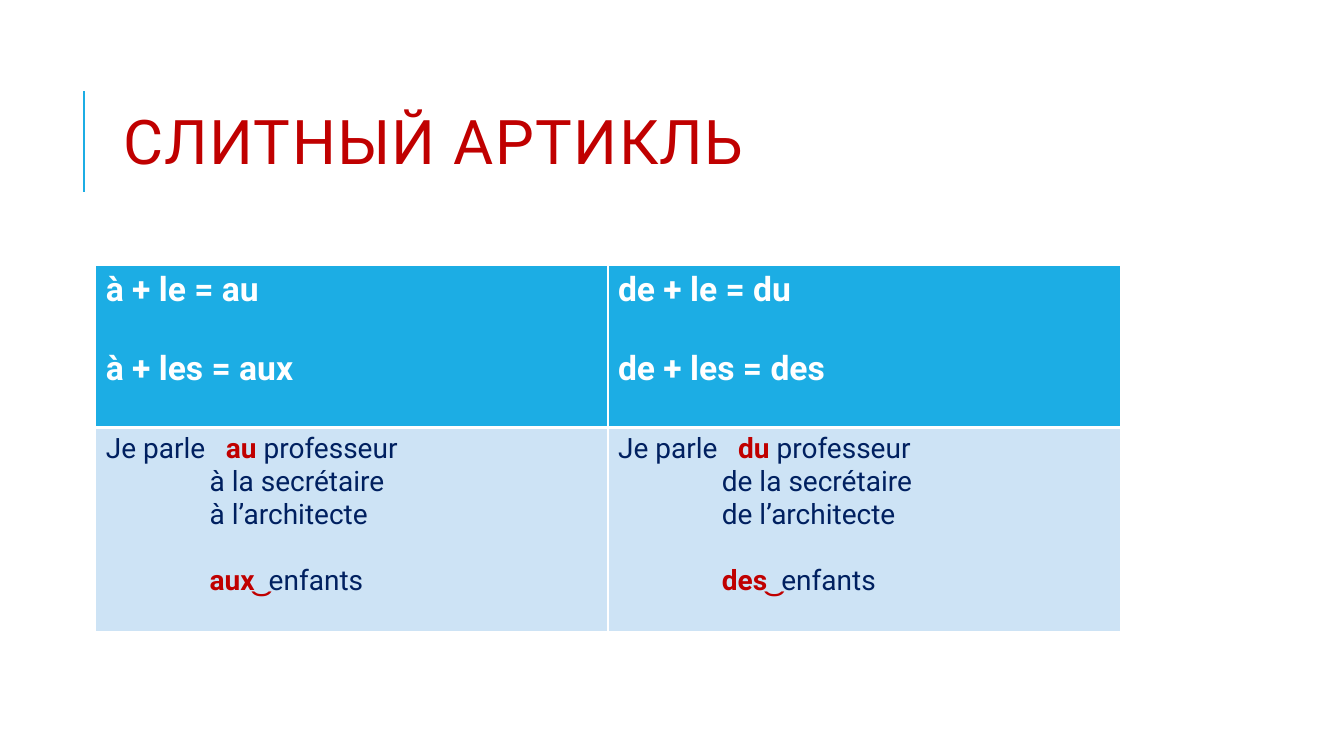
"""Build a slide on French contracted articles with a title and a two-column table."""

from dataclasses import dataclass

from lxml.etree import SubElement
from pptx import Presentation
from pptx.dml.color import RGBColor
from pptx.enum.shapes import MSO_CONNECTOR as Connector
from pptx.enum.text import MSO_ANCHOR as Anchor, PP_ALIGN as Align
from pptx.oxml.ns import qn
from pptx.util import Inches, Pt

FONT = "Roboto"
WHITE, BLUE, PALE, NAVY, RED = "FFFFFF", "1CADE4", "CDE3F5", "002060", "C00000"
PHRASE_INDENT, ARTICLE_TAB = 1.03, 1.19


@dataclass
class Run:
    text: str
    color: str = NAVY
    bold: bool = False


@dataclass
class Line:
    runs: list[Run]
    size: float = 20
    indent: float = 0
    before: float = 0
    tab: float = 0


@dataclass
class Column:
    contractions: tuple[str, str]
    singular: str
    phrases: tuple[str, str]
    plural: str

    def header(self) -> list[Line]:
        return [Line([Run(text, WHITE, True)], 24, before=gap)
                for text, gap in zip(self.contractions, (0, 28))]

    def examples(self) -> list[Line]:
        return [
            Line([Run("Je parle\t"), Run(self.singular, RED, True), Run(" professeur")],
                 tab=ARTICLE_TAB),
            *(Line([Run(phrase)], indent=PHRASE_INDENT) for phrase in self.phrases),
            Line([Run(f"{self.plural} ͜ ", RED, True), Run("enfants")],
                 indent=PHRASE_INDENT, before=23.5),
        ]


COLUMNS = [
    Column(("à + le = au", "à + les = aux"), "au", ("à la secrétaire", "à l’architecte"), "aux"),
    Column(("de + le = du", "de + les = des"), "du", ("de la secrétaire", "de l’architecte"), "des"),
]


def rgb(value: str) -> RGBColor:
    return RGBColor.from_string(value)


def apply_format(target, values: dict) -> None:
    for name, value in values.items():
        setattr(target, name, value)


def add_run(paragraph, run: Run, size: float):
    text_run = paragraph.add_run()
    text_run.text = run.text
    apply_format(text_run.font, {"name": FONT, "size": Pt(size), "bold": run.bold})
    text_run.font.color.rgb = rgb(run.color)
    return text_run


def add_title(slide) -> None:
    title = slide.shapes.title
    apply_format(title, {"left": Inches(1.12), "top": Inches(0.64),
                         "width": Inches(10.63), "height": Inches(1.64)})
    apply_format(title.text_frame, {"vertical_anchor": Anchor.MIDDLE, "word_wrap": True})
    paragraph = title.text_frame.paragraphs[0]
    apply_format(paragraph, {"alignment": Align.LEFT, "line_spacing": 0.8})
    text_run = add_run(paragraph, Run("СЛИТНЫЙ АРТИКЛЬ", RED), 44)
    text_run.font._element.set("spc", "100")


def add_accent(slide) -> None:
    accent = slide.shapes.add_connector(
        Connector.STRAIGHT, Inches(0.83), Inches(1.9), Inches(0.83), Inches(0.9))
    accent.line.color.rgb = rgb(BLUE)
    accent.line.width = Pt(1.5)
    SubElement(accent._element.spPr, qn("a:effectLst"))


def set_borders(cell, widths: dict[str, float]) -> None:
    properties = cell._tc.get_or_add_tcPr()
    for side, width in widths.items():
        border = SubElement(properties, qn(f"a:ln{side}"), w=str(Pt(width)))
        fill = SubElement(border, qn("a:solidFill"))
        SubElement(fill, qn("a:srgbClr"), val=WHITE)


def write_line(paragraph, line: Line) -> None:
    apply_format(paragraph, {"alignment": Align.LEFT, "space_before": Pt(line.before)})
    properties = paragraph._p.get_or_add_pPr()
    properties.set("marL", str(Inches(line.indent)))
    if line.tab:
        tabs = SubElement(properties, qn("a:tabLst"))
        SubElement(tabs, qn("a:tab"), pos=str(Inches(line.tab)), algn="l")
    for run in line.runs:
        add_run(paragraph, run, line.size)


def fill_cell(cell, lines: list[Line], color: str, borders: dict[str, float]) -> None:
    set_borders(cell, borders)
    cell.fill.solid()
    cell.fill.fore_color.rgb = rgb(color)
    cell.vertical_anchor = Anchor.TOP
    frame = cell.text_frame
    for index, line in enumerate(lines):
        write_line(frame.add_paragraph() if index else frame.paragraphs[0], line)


def add_article_table(slide) -> None:
    table = slide.shapes.add_table(
        2, len(COLUMNS), Inches(0.95), Inches(2.63), Inches(10.16), Inches(3.64)).table
    for row, height in zip(table.rows, (1.61, 2.03)):
        row.height = Inches(height)
    for index, column in enumerate(COLUMNS):
        table.columns[index].width = Inches(5.08)
        fill_cell(table.cell(0, index), column.header(), BLUE, {"L": 1, "R": 1, "T": 1, "B": 3})
        fill_cell(table.cell(1, index), column.examples(), PALE, {"L": 1, "R": 1, "T": 3, "B": 1})


def main() -> None:
    presentation = Presentation()
    apply_format(presentation, {"slide_width": Inches(13.33), "slide_height": Inches(7.5)})
    slide = presentation.slides.add_slide(presentation.slide_layouts[5])
    add_accent(slide)
    add_title(slide)
    add_article_table(slide)
    presentation.save("out.pptx")


if __name__ == "__main__":
    main()
